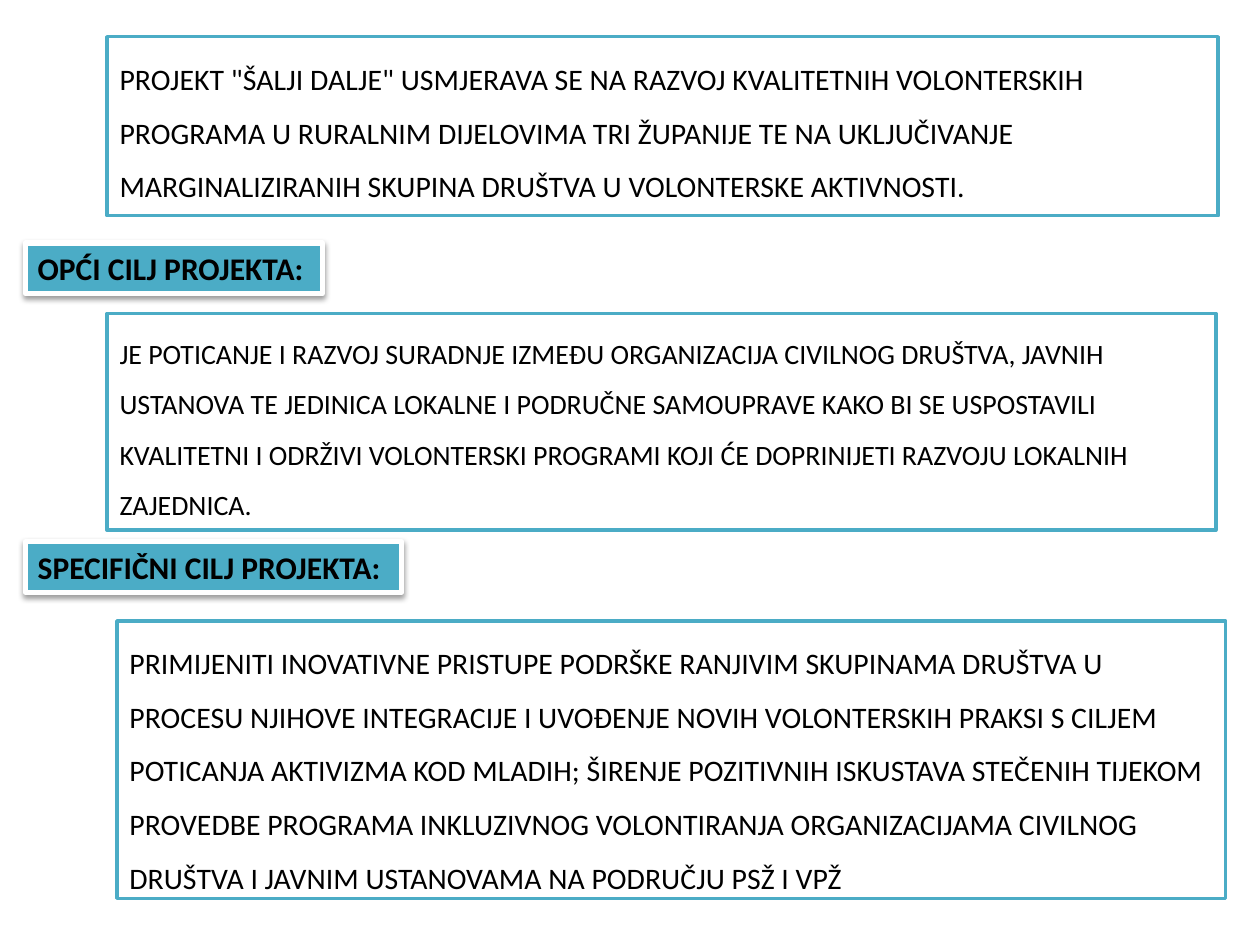
from lxml import etree
from pptx import Presentation
from pptx.dml.color import RGBColor
from pptx.enum.text import MSO_ANCHOR, MSO_AUTO_SIZE
from pptx.oxml import parse_xml
from pptx.util import Cm, Pt

TOP = MSO_ANCHOR.TOP
FIXED_SIZE = MSO_AUTO_SIZE.NONE
BLANK_LAYOUT = 6

FONT = "Calibri"
TEAL, WHITE, BLACK = "4BACC6", "FFFFFF", "000000"
DRAWING_NS = "http://schemas.openxmlformats.org/drawingml/2006/main"

LABEL_LEFT, LABEL_HEIGHT = 0.51, 1.02
INTRO = (
    'PROJEKT "ŠALJI DALJE" USMJERAVA SE NA RAZVOJ KVALITETNIH VOLONTERSKIH '
    "PROGRAMA U RURALNIM DIJELOVIMA TRI ŽUPANIJE TE NA UKLJUČIVANJE "
    "MARGINALIZIRANIH SKUPINA DRUŠTVA U VOLONTERSKE AKTIVNOSTI."
)
GENERAL_GOAL = (
    "JE POTICANJE I RAZVOJ SURADNJE IZMEĐU ORGANIZACIJA CIVILNOG DRUŠTVA, "
    "JAVNIH USTANOVA TE JEDINICA LOKALNE I PODRUČNE SAMOUPRAVE KAKO BI SE "
    "USPOSTAVILI KVALITETNI I ODRŽIVI VOLONTERSKI PROGRAMI KOJI ĆE "
    "DOPRINIJETI RAZVOJU LOKALNIH ZAJEDNICA."
)
SPECIFIC_GOAL = (
    "PRIMIJENITI INOVATIVNE PRISTUPE PODRŠKE RANJIVIM SKUPINAMA DRUŠTVA U "
    "PROCESU NJIHOVE INTEGRACIJE I UVOĐENJE NOVIH VOLONTERSKIH PRAKSI S CILJEM "
    "POTICANJA AKTIVIZMA KOD MLADIH; ŠIRENJE POZITIVNIH ISKUSTAVA STEČENIH "
    "TIJEKOM PROVEDBE PROGRAMA INKLUZIVNOG VOLONTIRANJA ORGANIZACIJAMA "
    "CIVILNOG DRUŠTVA I JAVNIM USTANOVAMA NA PODRUČJU PSŽ I VPŽ"
)


def rgb(hex_color):
    return RGBColor.from_string(hex_color)


def write_text(box, text, *, size, bold=False, spacing=1.0):
    frame = box.text_frame
    frame.word_wrap = True
    frame.auto_size = FIXED_SIZE
    frame.vertical_anchor = TOP
    paragraph = frame.paragraphs[0]
    paragraph.line_spacing = spacing
    run = paragraph.add_run()
    run.text = text
    run.font.name = FONT
    run.font.size = Pt(size)
    run.font.bold = bold
    run.font.color.rgb = rgb(BLACK)


def add_box(slide, left, top, width, height, *, fill, line, line_width):
    box = slide.shapes.add_textbox(Cm(left), Cm(top), Cm(width), Cm(height))
    box.fill.solid()
    box.fill.fore_color.rgb = rgb(fill)
    box.line.color.rgb = rgb(line)
    box.line.width = Pt(line_width)
    return box


def add_shadow(box):
    """Give the box a soft shadow falling straight down."""
    effects = etree.fromstring(
        f'<a:effectLst xmlns:a="{DRAWING_NS}">'
        '<a:outerShdw blurRad="40000" dist="20000" dir="5400000" rotWithShape="0">'
        f'<a:srgbClr val="{BLACK}"><a:alpha val="38000"/></a:srgbClr>'
        "</a:outerShdw></a:effectLst>"
    )
    box._element.spPr.append(parse_xml(etree.tostring(effects)))


def add_label(slide, text, top, width):
    label = add_box(slide, LABEL_LEFT, top, width, LABEL_HEIGHT,
                    fill=TEAL, line=WHITE, line_width=3)
    add_shadow(label)
    write_text(label, text, size=18, bold=True)


def add_statement(slide, text, left, top, width, height, size):
    statement = add_box(slide, left, top, width, height,
                        fill=WHITE, line=TEAL, line_width=2)
    write_text(statement, text, size=size, spacing=1.5)


def main():
    presentation = Presentation()
    presentation.slide_width = Cm(25.4)
    presentation.slide_height = Cm(19.05)
    slide = presentation.slides.add_slide(presentation.slide_layouts[BLANK_LAYOUT])

    add_label(slide, "OPĆI CILJ PROJEKTA:", top=4.9, width=5.99)
    add_statement(slide, GENERAL_GOAL, 2.16, 6.32, 22.35, 4.37, size=16)
    add_statement(slide, SPECIFIC_GOAL, 2.36, 12.52, 22.35, 5.59, size=17)
    add_label(slide, "SPECIFIČNI CILJ PROJEKTA:", top=10.92, width=7.59)
    add_statement(slide, INTRO, 2.16, 0.74, 22.4, 3.61, size=17)

    presentation.save("out.pptx")


if __name__ == "__main__":
    main()
